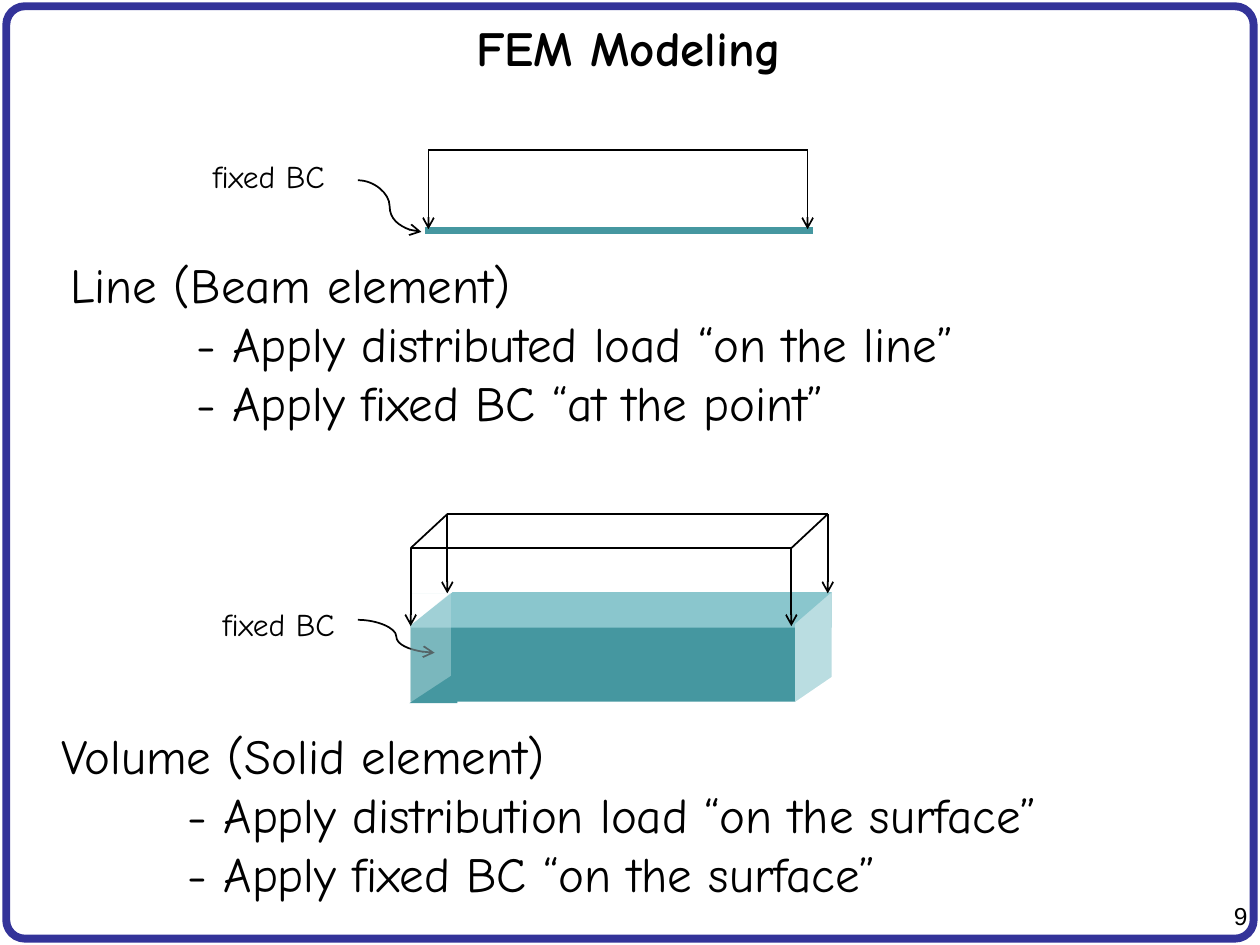
"""Build the FEM modeling slide comparing a beam element with a solid element."""
from typing import NamedTuple, Optional

from lxml.etree import SubElement
from pptx import Presentation
from pptx.dml.color import RGBColor
from pptx.enum.shapes import MSO_CONNECTOR, MSO_SHAPE
from pptx.enum.text import MSO_ANCHOR, PP_ALIGN
from pptx.oxml.ns import qn
from pptx.util import Pt

BLACK = RGBColor(0x00, 0x00, 0x00)
WHITE = RGBColor(0xFF, 0xFF, 0xFF)
NAVY = RGBColor(0x33, 0x33, 0x99)
TEAL = RGBColor(0x45, 0x97, 0xA0)
LIGHT_TEAL = RGBColor(0x8A, 0xC6, 0xCD)
PALE_TEAL = RGBColor(0xBA, 0xDD, 0xE1)
HAND_FONT = "Comic Neue"


class Face(NamedTuple):
    left: float
    top: float
    width: float
    height: float
    color: RGBColor
    flip: Optional[str] = None
    opacity: int = 100


class Line(NamedTuple):
    start: tuple[float, float]
    end: tuple[float, float]
    arrow: bool = False
    curved: bool = False
    color: RGBColor = BLACK
    width: float = 1


class Label(NamedTuple):
    left: float
    top: float
    width: float
    height: float
    lines: tuple[str, ...]
    size: float = 28
    font: str = HAND_FONT
    bold: bool = False
    align: PP_ALIGN = PP_ALIGN.LEFT
    anchor: MSO_ANCHOR = MSO_ANCHOR.TOP
    wrap: bool = True


FRONT_LEFT, FRONT_RIGHT, FRONT_TOP, FRONT_TIP = 234.7, 452.2, 313.2, 357.8
BACK_LEFT, BACK_RIGHT, BACK_TOP, BACK_TIP = 255.6, 473, 293.8, 339.1
BEAM_LEFT, BEAM_RIGHT, BEAM_TOP, BEAM_TIP = 244.8, 461.5, 85.7, 131

BLOCK_FACES = (
    Face(234.7, 354.2, 220.3, 46.8, TEAL),
    Face(234.7, 338.4, 240.5, 20.2, LIGHT_TEAL),
    Face(454.3, 339.1, 20.9, 61.9, PALE_TEAL),
    Face(453.6, 383, 27.4, 18.7, WHITE, "flipH"),
    Face(234.7, 338.4, 23.8, 18.7, WHITE, "flipV"),
    Face(453.6, 338.4, 21.6, 18.7, LIGHT_TEAL, "flipV"),
)
FIXED_FACES = (
    Face(234.7, 339.1, 23, 61.9, PALE_TEAL, opacity=46),
    Face(234, 383.8, 27.4, 18, TEAL, "flipH"),
    Face(234, 339.1, 23, 18.7, WHITE, "flipV"),
)
BEAM = Line((242.6, 131.8), (464.4, 131.8), color=TEAL, width=3.75)
LOAD_LINES = (
    Line((FRONT_RIGHT, FRONT_TOP), (FRONT_RIGHT, FRONT_TIP), arrow=True),
    Line((BACK_LEFT, BACK_TOP), (BACK_LEFT, BACK_TIP), arrow=True),
    Line((BACK_RIGHT, BACK_TOP), (BACK_RIGHT, BACK_TIP), arrow=True),
    Line((FRONT_LEFT, FRONT_TOP), (FRONT_RIGHT, FRONT_TOP)),
    Line((BACK_LEFT, BACK_TOP), (BACK_RIGHT, BACK_TOP)),
    Line((FRONT_LEFT, FRONT_TOP), (BACK_LEFT, BACK_TOP)),
    Line((FRONT_RIGHT, FRONT_TOP), (BACK_RIGHT, BACK_TOP)),
    Line((BEAM_LEFT, BEAM_TOP), (BEAM_LEFT, BEAM_TIP), arrow=True),
    Line((BEAM_RIGHT, BEAM_TOP), (BEAM_RIGHT, BEAM_TIP), arrow=True),
    Line((BEAM_LEFT, BEAM_TOP), (BEAM_RIGHT, BEAM_TOP)),
)
POINTERS = (
    Line((204.5, 103), (240.8, 132.5), arrow=True, curved=True),
    Line((204.5, 354.2), (248.4, 373), arrow=True, curved=True),
)
FRONT_LEFT_LOAD = Line((FRONT_LEFT, FRONT_TOP), (FRONT_LEFT, FRONT_TIP), arrow=True)
LABELS = (
    Label(681.1, 511.2, 38.9, 23.8, ("9",), 14, "Arial", align=PP_ALIGN.RIGHT),
    Label(2.9, 3.6, 712.8, 46.8, ("FEM Modeling",), bold=True,
          align=PP_ALIGN.CENTER, anchor=MSO_ANCHOR.MIDDLE),
    Label(33.1, 141.8, 671, 108.7, (
        "Line (Beam element)",
        "- Apply distributed load “on the line”",
        "- Apply fixed BC “at the point”")),
    Label(28.1, 411.1, 655.9, 108.7, (
        "Volume (Solid element)",
        "- Apply distribution load “on the surface”",
        "- Apply fixed BC “on the surface”")),
    Label(114.5, 86.4, 87.8, 28.8, ("fixed BC",), 18, wrap=False),
    Label(120.2, 342, 87.8, 28.8, ("fixed BC",), 18, wrap=False),
)


def set_attributes(target: object, values: dict) -> None:
    """Set every named value on the target."""
    for name, value in values.items():
        setattr(target, name, value)


def draw_frame(slide) -> None:
    """Draw the rounded border of the slide."""
    shape = slide.shapes.add_shape(
        MSO_SHAPE.ROUNDED_RECTANGLE, Pt(3.6), Pt(3.6), Pt(712.8), Pt(532.8))
    shape.adjustments[0] = 0.02
    shape.shadow.inherit = False
    shape.fill.background()
    shape.line.color.rgb = NAVY
    shape.line.width = Pt(4.5)


def draw_face(slide, face: Face) -> None:
    """Draw one rectangle, or a flipped right triangle, of the solid."""
    kind = MSO_SHAPE.RIGHT_TRIANGLE if face.flip else MSO_SHAPE.RECTANGLE
    shape = slide.shapes.add_shape(kind, *map(Pt, face[:4]))
    shape.shadow.inherit = False
    shape.fill.solid()
    shape.fill.fore_color.rgb = face.color
    shape.line.fill.background()
    properties = shape._element.spPr
    if face.flip:
        properties.find(qn("a:xfrm")).set(face.flip, "1")
    if face.opacity < 100:
        color = properties.find(qn("a:solidFill")).find(qn("a:srgbClr"))
        SubElement(color, qn("a:alpha"), val=str(face.opacity * 1000))


def draw_line(slide, line: Line) -> None:
    """Draw a straight or curved connector, with an arrowhead if asked."""
    kind = MSO_CONNECTOR.CURVE if line.curved else MSO_CONNECTOR.STRAIGHT
    connector = slide.shapes.add_connector(kind, *map(Pt, line.start + line.end))
    connector.line.color.rgb = line.color
    connector.line.width = Pt(line.width)
    properties = connector._element.spPr
    if line.arrow:
        SubElement(properties.find(qn("a:ln")), qn("a:tailEnd"), type="arrow")
    SubElement(properties, qn("a:effectLst"))


def draw_label(slide, label: Label) -> None:
    """Write a text box whose lines after the first are indented."""
    frame = slide.shapes.add_textbox(*map(Pt, label[:4])).text_frame
    set_attributes(frame, {"word_wrap": label.wrap, "vertical_anchor": label.anchor})
    for index, text in enumerate(label.lines):
        paragraph = frame.add_paragraph() if index else frame.paragraphs[0]
        set_attributes(paragraph, {"text": text, "alignment": label.align})
        set_attributes(paragraph.runs[0].font, {
            "name": label.font, "size": Pt(label.size), "bold": label.bold})
        paragraph.runs[0].font.color.rgb = BLACK
        if index:
            paragraph._p.get_or_add_pPr().set("marL", str(Pt(72)))


def main() -> None:
    """Build and save the slide."""
    presentation = Presentation()
    set_attributes(presentation, {"slide_width": Pt(720), "slide_height": Pt(540)})
    slide = presentation.slides.add_slide(presentation.slide_layouts[6])
    draw_frame(slide)
    draw_line(slide, BEAM)
    for face in BLOCK_FACES:
        draw_face(slide, face)
    for line in LOAD_LINES + POINTERS:
        draw_line(slide, line)
    for label in LABELS:
        draw_label(slide, label)
    for face in FIXED_FACES:
        draw_face(slide, face)
    draw_line(slide, FRONT_LEFT_LOAD)
    presentation.save("out.pptx")


if __name__ == "__main__":
    main()
